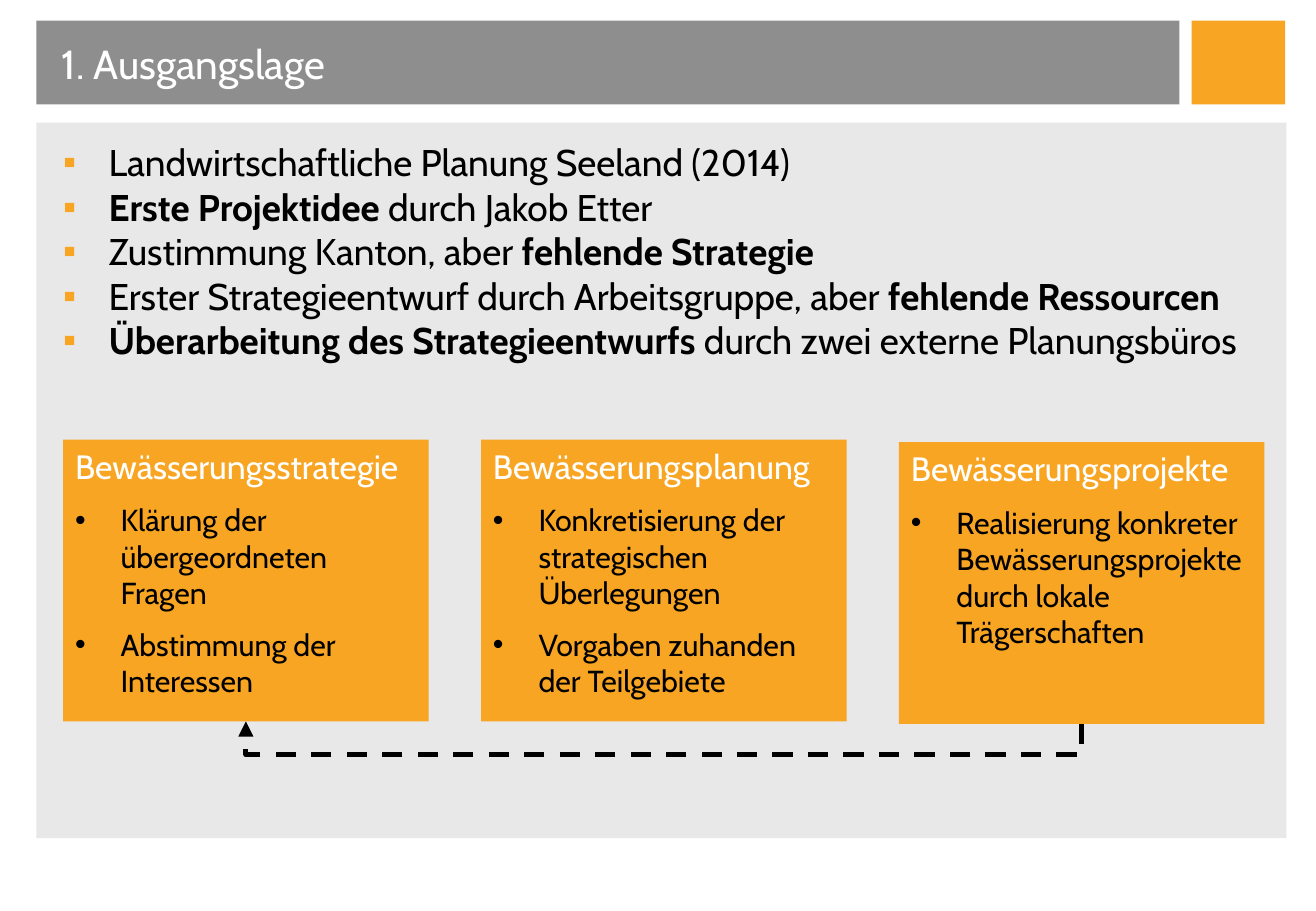
from dataclasses import dataclass

from lxml import etree
from pptx import Presentation
from pptx.dml.color import RGBColor
from pptx.enum.dml import MSO_LINE
from pptx.enum.shapes import MSO_CONNECTOR, MSO_SHAPE
from pptx.enum.text import MSO_ANCHOR, MSO_AUTO_SIZE, PP_ALIGN
from pptx.oxml.ns import qn
from pptx.util import Pt

RECTANGLE = MSO_SHAPE.RECTANGLE
ELBOW = MSO_CONNECTOR.ELBOW
DASH = MSO_LINE.DASH
TOP, MIDDLE = MSO_ANCHOR.TOP, MSO_ANCHOR.MIDDLE
LEFT = PP_ALIGN.LEFT
NO_AUTOFIT = MSO_AUTO_SIZE.NONE
BOTTOM_SITE = 2


@dataclass(frozen=True)
class Theme:
    font: str = "Cabin"
    orange: str = "F8A523"
    gray: str = "8E8E8E"
    panel: str = "E8E8E8"
    white: str = "FFFFFF"
    black: str = "000000"
    title_size: float = 24
    body_size: float = 22
    heading_size: float = 20
    detail_size: float = 18
    indent: float = 27
    detail_gap: float = 9
    arrow_width: float = 3


THEME = Theme()

BACKGROUND = [
    ((706.3, 12.2, 55.4, 49.7), THEME.orange),
    ((21.6, 12.2, 677.5, 49.7), THEME.gray),
    ((21.6, 72.7, 740.9, 424.1), THEME.panel),
]

HISTORY = [
    [("Landwirtschaftliche Planung Seeland (2014)", False)],
    [("Erste Projektidee ", True), ("durch Jakob Etter", False)],
    [("Zustimmung Kanton, aber ", False), ("fehlende Strategie", True)],
    [("Erster Strategieentwurf durch Arbeitsgruppe, aber ", False),
     ("fehlende Ressourcen", True)],
    [("Überarbeitung des Strategieentwurfs ", True),
     ("durch zwei externe Planungsbüros", False)],
]

STAGES = [
    ("Bewässerungsstrategie", 260.6,
     ["Klärung der übergeordneten Fragen", "Abstimmung der Interessen"]),
    ("Bewässerungsplanung", 260.6,
     ["Konkretisierung der strategischen Überlegungen",
      "Vorgaben zuhanden der Teilgebiete"]),
    ("Bewässerungsprojekte", 262.1,
     ["Realisierung konkreter Bewässerungsprojekte durch lokale Trägerschaften"]),
]


def color(value):
    return RGBColor.from_string(value)


def add_run(paragraph, text, size, ink, bold=False):
    run = paragraph.add_run()
    run.text = text
    run.font.name = THEME.font
    run.font.size = Pt(size)
    run.font.bold = bold
    run.font.color.rgb = color(ink)


def add_bullet(paragraph, character, ink):
    properties = paragraph._p.get_or_add_pPr()
    properties.set("marL", str(Pt(THEME.indent)))
    properties.set("indent", str(-Pt(THEME.indent)))
    bullet_color = etree.SubElement(properties, qn("a:buClr"))
    etree.SubElement(bullet_color, qn("a:srgbClr"), val=ink)
    etree.SubElement(properties, qn("a:buFont"), typeface="Arial")
    etree.SubElement(properties, qn("a:buChar"), char=character)


def next_paragraph(frame, index, gap=0):
    paragraph = frame.add_paragraph() if index else frame.paragraphs[0]
    paragraph.alignment = LEFT
    paragraph.space_before = Pt(gap if index else 0)
    return paragraph


def add_block(slide, box, fill):
    block = slide.shapes.add_shape(RECTANGLE, *map(Pt, box))
    block.shadow.inherit = False
    block.fill.solid()
    block.fill.fore_color.rgb = color(fill)
    block.line.fill.background()
    return block


def place_placeholder(slide, placeholder, box, anchor):
    slide.shapes.element.append(placeholder.element)
    placeholder.left, placeholder.top, placeholder.width, placeholder.height = map(Pt, box)
    frame = placeholder.text_frame
    frame.margin_left = frame.margin_top = frame.margin_right = frame.margin_bottom = 0
    frame.word_wrap = True
    frame.auto_size = NO_AUTOFIT
    frame.vertical_anchor = anchor
    return frame


def fill_title(slide, box):
    frame = place_placeholder(slide, slide.shapes.title, box, MIDDLE)
    add_run(next_paragraph(frame, 0), "1. Ausgangslage", THEME.title_size, THEME.white)


def fill_history(slide, box):
    frame = place_placeholder(slide, slide.placeholders[1], box, TOP)
    for index, parts in enumerate(HISTORY):
        paragraph = next_paragraph(frame, index)
        add_bullet(paragraph, "▪", THEME.orange)
        for text, bold in parts:
            add_run(paragraph, text, THEME.body_size, THEME.black, bold)


def add_stage(slide, box, heading, details):
    stage = add_block(slide, box, THEME.orange)
    frame = stage.text_frame
    frame.word_wrap = True
    frame.vertical_anchor = TOP
    add_run(next_paragraph(frame, 0), heading, THEME.heading_size, THEME.white)
    for index, detail in enumerate(details, 1):
        paragraph = next_paragraph(frame, index, THEME.detail_gap)
        add_bullet(paragraph, "•", THEME.black)
        add_run(paragraph, detail, THEME.detail_size, THEME.black)
    return stage


def add_feedback_arrow(slide, source, target, drop):
    start_x, end_x = (stage.left + stage.width // 2 for stage in (source, target))
    start_y, end_y = (stage.top + stage.height for stage in (source, target))
    rise, span = start_y - end_y, start_x - end_x
    arrow = slide.shapes.add_connector(ELBOW, start_x, start_y, end_x, end_y)
    arrow.begin_connect(source, BOTTOM_SITE)
    arrow.end_connect(target, BOTTOM_SITE)

    arrow.left = (start_x + end_x - rise) // 2
    arrow.top = (start_y + end_y - span) // 2
    arrow.width, arrow.height = rise, span
    properties = arrow.element.spPr
    transform = properties.find(qn("a:xfrm"))
    transform.set("rot", "5400000")
    transform.set("flipH", "1")
    transform.set("flipV", "0")
    adjustments = properties.find(qn("a:prstGeom")).get_or_add_avLst()
    bend = round(-Pt(drop) / rise * 100000)
    etree.SubElement(adjustments, qn("a:gd"), name="adj1", fmla=f"val {bend}")

    arrow.line.color.rgb = color(THEME.black)
    arrow.line.width = Pt(THEME.arrow_width)
    arrow.line.dash_style = DASH
    etree.SubElement(arrow.line._get_or_add_ln(), qn("a:tailEnd"), type="triangle")
    etree.SubElement(properties, qn("a:effectLst"))


def add_stages(slide, left, width, height, pitch):
    stages = [
        add_stage(slide, (left + index * pitch, top, width, height), heading, details)
        for index, (heading, top, details) in enumerate(STAGES)
    ]
    add_feedback_arrow(slide, stages[-1], stages[0], 18)


def main():
    presentation = Presentation()
    presentation.slide_width, presentation.slide_height = Pt(780), Pt(540)
    slide = presentation.slides.add_slide(presentation.slide_layouts[1])
    for box, fill in BACKGROUND:
        add_block(slide, box, fill)
    fill_title(slide, (36.7, 12.2, 653.8, 50.4))
    fill_history(slide, (37.4, 82.8, 711.4, 399.6))
    add_stages(slide, 37.4, 216.7, 167, 247.7)
    presentation.save("out.pptx")


if __name__ == "__main__":
    main()
